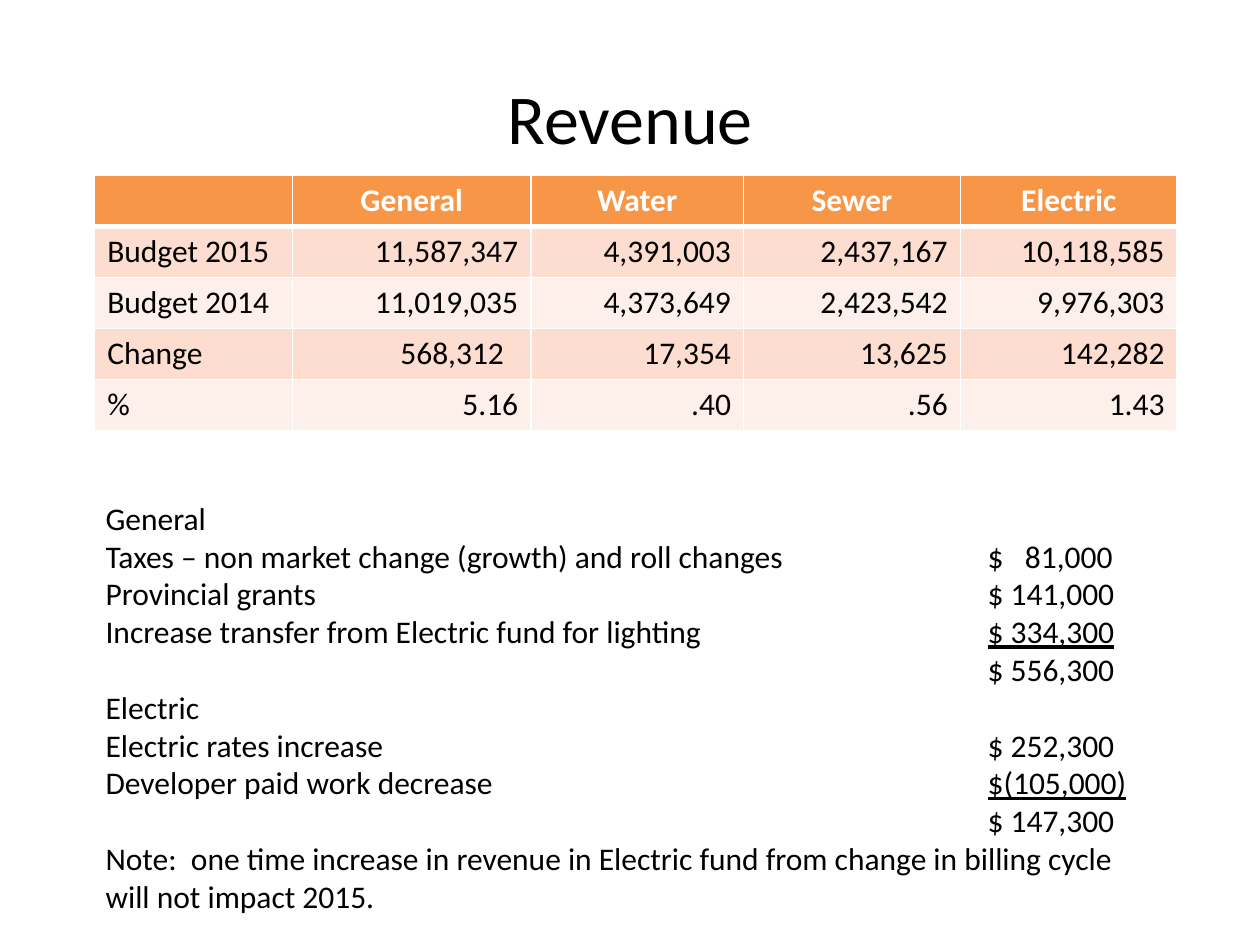
from pptx import Presentation
from pptx.dml.color import RGBColor
from pptx.enum.text import MSO_ANCHOR, PP_ALIGN
from pptx.oxml.ns import qn
from pptx.util import Cm, Pt
from lxml.etree import SubElement

BLACK = RGBColor(0x00, 0x00, 0x00)
WHITE = RGBColor(0xFF, 0xFF, 0xFF)
ORANGE = RGBColor(0xF7, 0x96, 0x46)
BANDS = [RGBColor(0xFC, 0xDD, 0xCF), RGBColor(0xFD, 0xEF, 0xE9)]


def add_run(paragraph, text, color=BLACK, size=18, bold=False, underline=False):
    run = paragraph.add_run()
    run.text = text
    run.font.name = "Calibri"
    run.font.size = Pt(size)
    run.font.color.rgb = color
    run.font.bold = bold
    run.font.underline = underline


def add_borders(cell, top, bottom):
    properties = cell._tc.get_or_add_tcPr()
    for side, width in (("L", 1), ("R", 1), ("T", top), ("B", bottom)):
        line = SubElement(properties, qn(f"a:ln{side}"), w=str(Pt(width)))
        fill = SubElement(line, qn("a:solidFill"))
        SubElement(fill, qn("a:srgbClr"), val=str(WHITE))


prs = Presentation()
prs.slide_width, prs.slide_height = Cm(25.4), Cm(19.05)
slide = prs.slides.add_slide(prs.slide_layouts[5])

# Title
title = slide.shapes.title
title.left, title.top, title.width, title.height = Cm(1.27), Cm(0.76), Cm(22.86), Cm(3.18)
title.text_frame.vertical_anchor = MSO_ANCHOR.MIDDLE
heading = title.text_frame.paragraphs[0]
heading.alignment = PP_ALIGN.CENTER
add_run(heading, "Revenue", size=40)

# Budget table
budget_rows = [
    ["", "General", "Water", "Sewer", "Electric"],
    ["Budget 2015", "11,587,347", "4,391,003", "2,437,167", "10,118,585"],
    ["Budget 2014", "11,019,035", "4,373,649", "2,423,542", "9,976,303"],
    ["Change", "568,312", "17,354", "13,625", "142,282"],
    ["%", "5.16", ".40", ".56", "1.43"],
]
column_widths = [3.99, 4.8, 4.29, 4.37, 4.37]
budget = slide.shapes.add_table(5, 5, Cm(1.91), Cm(3.53), Cm(21.82), Cm(5.15)).table
for column, width in zip(budget.columns, column_widths):
    column.width = Cm(width)
for r, values in enumerate(budget_rows):
    budget.rows[r].height = Cm(1.03)
    for c, value in enumerate(values):
        cell = budget.cell(r, c)
        add_borders(cell, top=3 if r == 1 else 1, bottom=3 if r == 0 else 1)
        cell.fill.solid()
        cell.fill.fore_color.rgb = BANDS[(r - 1) % 2] if r else ORANGE
        if r > 1 and c:
            cell.vertical_anchor = MSO_ANCHOR.MIDDLE
        paragraph = cell.text_frame.paragraphs[0]
        if r == 0:
            paragraph.alignment = PP_ALIGN.CENTER
        else:
            paragraph.alignment = PP_ALIGN.RIGHT if c else PP_ALIGN.LEFT
        if value:
            add_run(paragraph, value, BLACK if r else WHITE, bold=r == 0)
# The general change is set in a little from the right
budget.cell(3, 1).margin_right = Cm(0.54)

# Explanation of the changes: label, amount, underlined before a total
explanations = [
    ("General", "", False),
    ("Taxes – non market change (growth) and roll changes", "$\t81,000", False),
    ("Provincial grants", "$ 141,000", False),
    ("Increase transfer from Electric fund for lighting", "$ 334,300", True),
    ("", "$ 556,300", False),
    ("Electric", "", False),
    ("Electric rates increase", "$ 252,300", False),
    ("Developer paid work decrease", "$(105,000)", True),
    ("", "$ 147,300", False),
    ("Note:  one time increase in revenue in Electric fund from change in "
     "billing cycle will not impact 2015.", "", False),
]
details = slide.shapes.add_textbox(Cm(1.88), Cm(9.93), Cm(21.64), Cm(8.71)).text_frame
details.word_wrap = True
for i, (label, amount, underlined) in enumerate(explanations):
    paragraph = details.add_paragraph() if i else details.paragraphs[0]
    if amount:
        # Amounts start at the left stop; split digits end at the right stop
        stops = SubElement(paragraph._p.get_or_add_pPr(), qn("a:tabLst"))
        for position, align in ((17.78, "l"), (20.3, "r")):
            SubElement(stops, qn("a:tab"), pos=str(Cm(position)), algn=align)
        add_run(paragraph, label + "\t")
        add_run(paragraph, amount, underline=underlined)
    else:
        add_run(paragraph, label)

prs.save("out.pptx")
